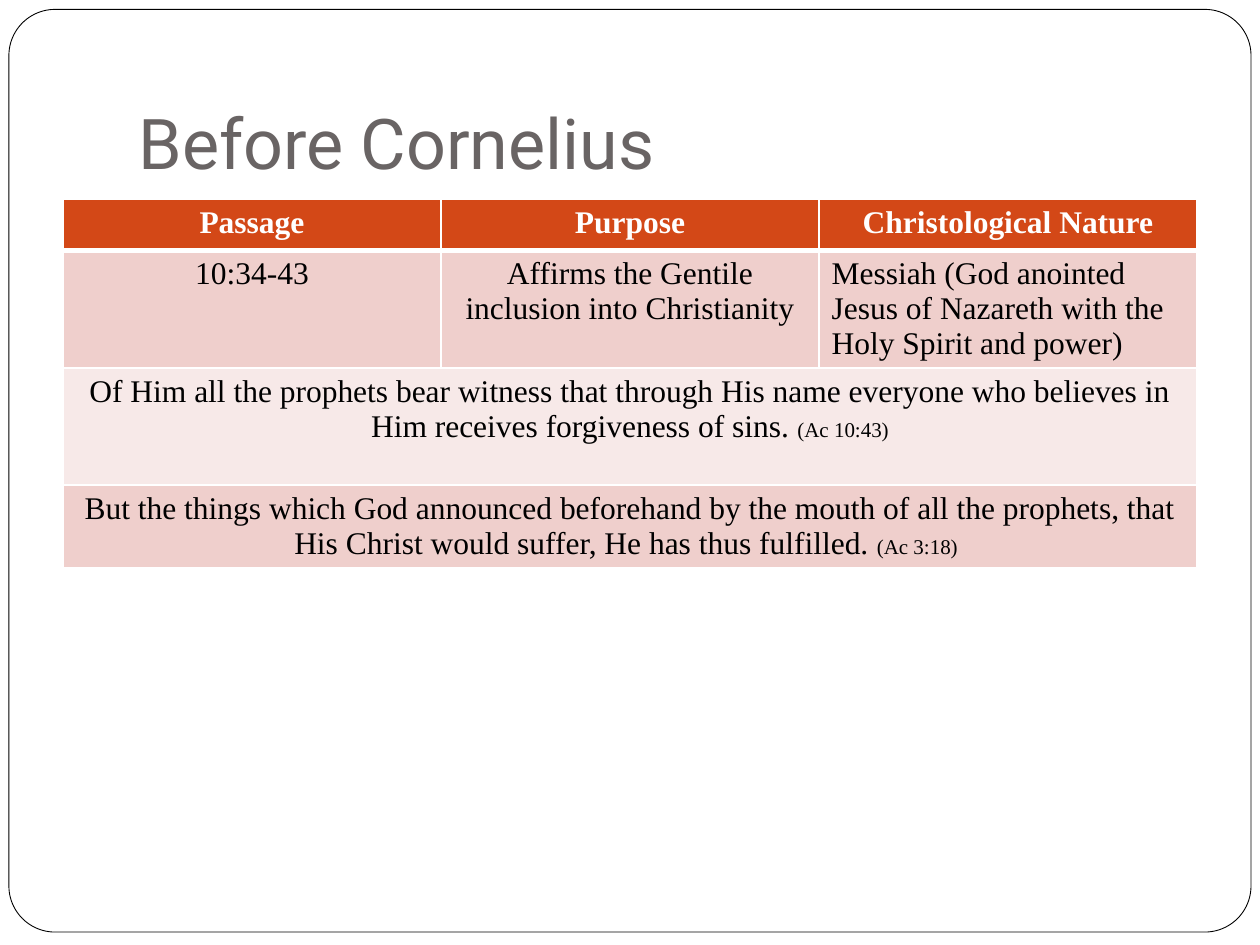
from dataclasses import dataclass

from lxml import etree
from pptx import Presentation
from pptx.dml.color import RGBColor
from pptx.enum.shapes import MSO_SHAPE
from pptx.enum.text import MSO_ANCHOR, MSO_AUTO_SIZE, PP_ALIGN
from pptx.oxml.ns import qn
from pptx.util import Cm, Pt

ROUNDED = MSO_SHAPE.ROUNDED_RECTANGLE
LEFT, CENTER = PP_ALIGN.LEFT, PP_ALIGN.CENTER
BOTTOM = MSO_ANCHOR.BOTTOM
NO_AUTOFIT = MSO_AUTO_SIZE.NONE

COLORS = {
    "white": "FFFFFF",
    "black": "000000",
    "title": "696464",
    "header": "D34817",
    "band": "EFCFCC",
    "light": "F7E9E8",
}
TITLE_FONT = "Roboto"
TABLE_FONT = "Times New Roman"
COLUMNS = 3


@dataclass
class Run:
    text: str
    size: int = 18


@dataclass
class CellText:
    runs: list[Run]
    align: PP_ALIGN = CENTER


@dataclass
class Row:
    """A table row; a single cell spans all columns."""
    height: float
    fill: str
    cells: list[CellText]
    header: bool = False


ROWS = [
    Row(1.03, "header", [
        CellText([Run("Passage")]),
        CellText([Run("Purpose")]),
        CellText([Run("Christological Nature")]),
    ], header=True),
    Row(2.36, "band", [
        CellText([Run("10:34-43")]),
        CellText([Run("Affirms the Gentile inclusion into Christianity")]),
        CellText([Run("Messiah (God anointed Jesus of Nazareth with the "
                      "Holy Spirit and power)")], LEFT),
    ]),
    Row(2.36, "light", [CellText([
        Run("Of Him all the prophets bear witness that through His name "
            "everyone who believes in Him receives forgiveness of sins. "),
        Run("(Ac 10:43)", 12),
    ])]),
    Row(1.65, "band", [CellText([
        Run("But the things which God announced beforehand by the mouth of all "
            "the prophets, that His Christ would suffer, He has thus fulfilled. "),
        Run("(Ac 3:18)", 12),
        Run(" "),
    ])]),
]


def rgb(name: str) -> RGBColor:
    return RGBColor.from_string(COLORS[name])


def add_run(p, run: Run, font: str, color: str, bold: bool = False) -> None:
    r = p.add_run()
    r.text = run.text
    r.font.name = font
    r.font.size = Pt(run.size)
    r.font.bold = bold
    r.font.color.rgb = rgb(color)


def add_frame(s) -> None:
    """Draw the rounded page border behind everything else."""
    sp = s.shapes.add_shape(ROUNDED, Cm(0.18), Cm(0.19), Cm(25.04), Cm(18.6))
    sp.adjustments[0] = 0.05
    sp.shadow.inherit = False
    sp.fill.solid()
    sp.fill.fore_color.rgb = rgb("white")
    sp.line.color.rgb = rgb("black")
    sp.line.width = Pt(0.5)
    s.shapes.title._element.addprevious(sp._element)


def set_title(s, text: str) -> None:
    sp = s.shapes.title
    sp.left, sp.top, sp.width, sp.height = Cm(2.54), Cm(0.76), Cm(21.59), Cm(3.18)
    tf = sp.text_frame
    tf.auto_size = NO_AUTOFIT
    tf.vertical_anchor = BOTTOM
    tf.margin_bottom = Cm(0.25)
    p = tf.paragraphs[0]
    p.alignment = LEFT
    add_run(p, Run(text, 40), TITLE_FONT, "title")


def set_borders(cell, bottom: int) -> None:
    tc_pr = cell._tc.get_or_add_tcPr()
    for side, width in (("L", 1), ("R", 1), ("T", 1), ("B", bottom)):
        ln = etree.SubElement(tc_pr, qn(f"a:ln{side}"), w=str(Pt(width)))
        fill = etree.SubElement(ln, qn("a:solidFill"))
        etree.SubElement(fill, qn("a:srgbClr"), val=COLORS["white"])


def add_passage_table(s, rows: list[Row]) -> None:
    height = sum(row.height for row in rows)
    table = s.shapes.add_table(len(rows), COLUMNS, Cm(1.27), Cm(4.02),
                               Cm(22.86), Cm(height)).table
    for i, row in enumerate(rows):
        table.rows[i].height = Cm(row.height)
        for cell in table.rows[i].cells:
            set_borders(cell, 3 if row.header else 1)
            cell.fill.solid()
            cell.fill.fore_color.rgb = rgb(row.fill)
        if len(row.cells) == 1:
            table.cell(i, 0).merge(table.cell(i, COLUMNS - 1))
        for j, content in enumerate(row.cells):
            p = table.cell(i, j).text_frame.paragraphs[0]
            p.alignment = content.align
            for run in content.runs:
                add_run(p, run, TABLE_FONT,
                        "white" if row.header else "black", row.header)


def main() -> None:
    prs = Presentation()
    prs.slide_width, prs.slide_height = Cm(25.4), Cm(19.05)
    s = prs.slides.add_slide(prs.slide_layouts[5])
    add_frame(s)
    set_title(s, "Before Cornelius")
    add_passage_table(s, ROWS)
    prs.save("out.pptx")


if __name__ == "__main__":
    main()
